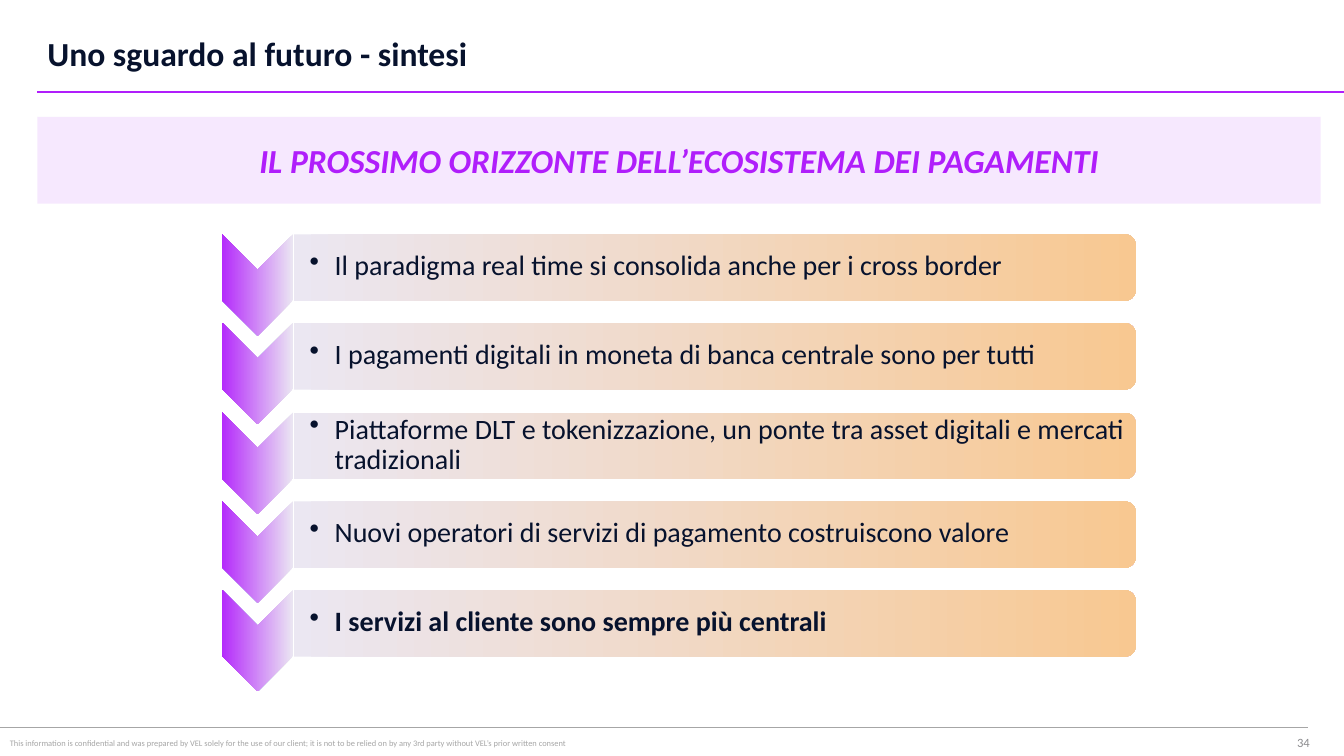
"""Build the closing slide on the next horizon of the payments ecosystem."""
from dataclasses import dataclass

from lxml import etree
from pptx import Presentation
from pptx.dml.color import RGBColor as RGB
from pptx.enum.shapes import MSO_CONNECTOR as Connector, MSO_SHAPE as Preset
from pptx.enum.text import MSO_ANCHOR as Anchor, PP_ALIGN as Align
from pptx.oxml.ns import qn
from pptx.util import Pt

PX = 9144


@dataclass(frozen=True)
class Theme:
    font: str = "Calibri"
    ink: str = "07122D"
    violet: str = "B01EFB"
    lilac: str = "EFD2FE"
    mist: str = "EBE7F2"
    purple: str = "B42AFB"
    apricot: str = "F8C891"
    rule: str = "A6A6A6"
    number: str = "8C8C8F"
    heading_size: int = 24
    item_size: int = 20
    number_size: int = 9
    notice_size: int = 6


theme = Theme()


def write(shape, text, size, color, bold=False, align=Align.LEFT, anchor=Anchor.MIDDLE):
    """Put one formatted paragraph in a shape and return it."""
    frame = shape.text_frame
    frame.word_wrap = True
    frame.vertical_anchor = anchor
    paragraph = frame.paragraphs[0]
    paragraph.text = text
    paragraph.alignment = align
    font = paragraph.font
    font.name, font.size, font.bold = theme.font, Pt(size), bold
    font.color.rgb = RGB.from_string(color)
    return paragraph


presentation = Presentation()
presentation.slide_width, presentation.slide_height = 1333 * PX, 750 * PX
slide = presentation.slides.add_slide(presentation.slide_layouts[5])
shapes = slide.shapes

for left, right, top, color, width in (
    (37, 1333, 91, theme.violet, 1.5),
    (0, 1297, 722, theme.rule, 0.75),
):
    line = shapes.add_connector(Connector.STRAIGHT, left * PX, top * PX, right * PX, top * PX)
    line.line.color.rgb = RGB.from_string(color)
    line.line.width = Pt(width)
    etree.SubElement(line._element.spPr, qn("a:effectLst"))

title = shapes.title
title.left, title.top, title.width, title.height = 37 * PX, 19 * PX, 1199 * PX, 73 * PX
heading = write(title, "Uno sguardo al futuro - sintesi", theme.heading_size, theme.ink, bold=True)
heading.line_spacing = 0.9

notice = shapes.add_textbox(0, 727 * PX, 680 * PX, 30 * PX)
write(
    notice,
    "This information is confidential and was prepared by VEL solely for the use of our client; "
    "it is not to be relied on by any 3rd party without VEL’s prior written consent",
    theme.notice_size, theme.rule, anchor=Anchor.TOP,
)
number = shapes.add_textbox(1009 * PX, 717 * PX, 300 * PX, 40 * PX)
write(number, "34", theme.number_size, theme.number, align=Align.RIGHT)

banner = shapes.add_shape(Preset.RECTANGLE, 37 * PX, 116 * PX, 1273 * PX, 86 * PX)
banner.shadow.inherit = False
banner.line.fill.background()
banner.fill.solid()
banner.fill.fore_color.rgb = RGB.from_string(theme.lilac)
banner_color = banner._element.spPr.find(".//" + qn("a:srgbClr"))
etree.SubElement(banner_color, qn("a:alpha"), val="50000")
slogan = write(
    banner, "IL PROSSIMO ORIZZONTE DELL’ECOSISTEMA DEI PAGAMENTI",
    theme.heading_size, theme.violet, bold=True, align=Align.CENTER,
)
slogan.font.italic = True

items = (
    ("Il paradigma real time si consolida anche per i cross border", False),
    ("I pagamenti digitali in moneta di banca centrale sono per tutti", False),
    ("Piattaforme DLT e tokenizzazione, un ponte tra asset digitali e mercati tradizionali", False),
    ("Nuovi operatori di servizi di pagamento costruiscono valore", False),
    ("I servizi al cliente sono sempre più centrali", True),
)
for index, (text, bold) in enumerate(items):
    top = round(235 + 88.3 * index)
    for preset, left, offset, width, height, color, angle in (
        (Preset.CHEVRON, 205, 12, 101, 71, theme.purple, 270),
        (Preset.ROUND_2_SAME_RECTANGLE, 676, -387, 66, 835, theme.apricot, 90),
    ):
        shape = shapes.add_shape(preset, left * PX, (top + offset) * PX, width * PX, height * PX)
        shape.rotation = 90
        shape.shadow.inherit = False
        shape.line.fill.background()
        shape.fill.gradient()
        shape.fill.gradient_angle = angle
        for stop, stop_color, position in zip(shape.fill.gradient_stops, (theme.mist, color), (0, 1)):
            stop.color.rgb = RGB.from_string(stop_color)
            stop.position = position

    label = shapes.add_textbox(291 * PX, top * PX, 832 * PX, 59 * PX)
    frame = label.text_frame
    frame.margin_left = 16 * PX
    frame.margin_right = frame.margin_top = frame.margin_bottom = PX
    properties = frame.paragraphs[0]._p.get_or_add_pPr()
    properties.set("marL", str(25 * PX))
    properties.set("indent", str(-25 * PX))
    etree.SubElement(properties, qn("a:buChar"), char="•")
    paragraph = write(label, text, theme.item_size, theme.ink, bold=bold)
    paragraph.line_spacing = 0.9
    paragraph.space_after = Pt(3)

presentation.save("out.pptx")
